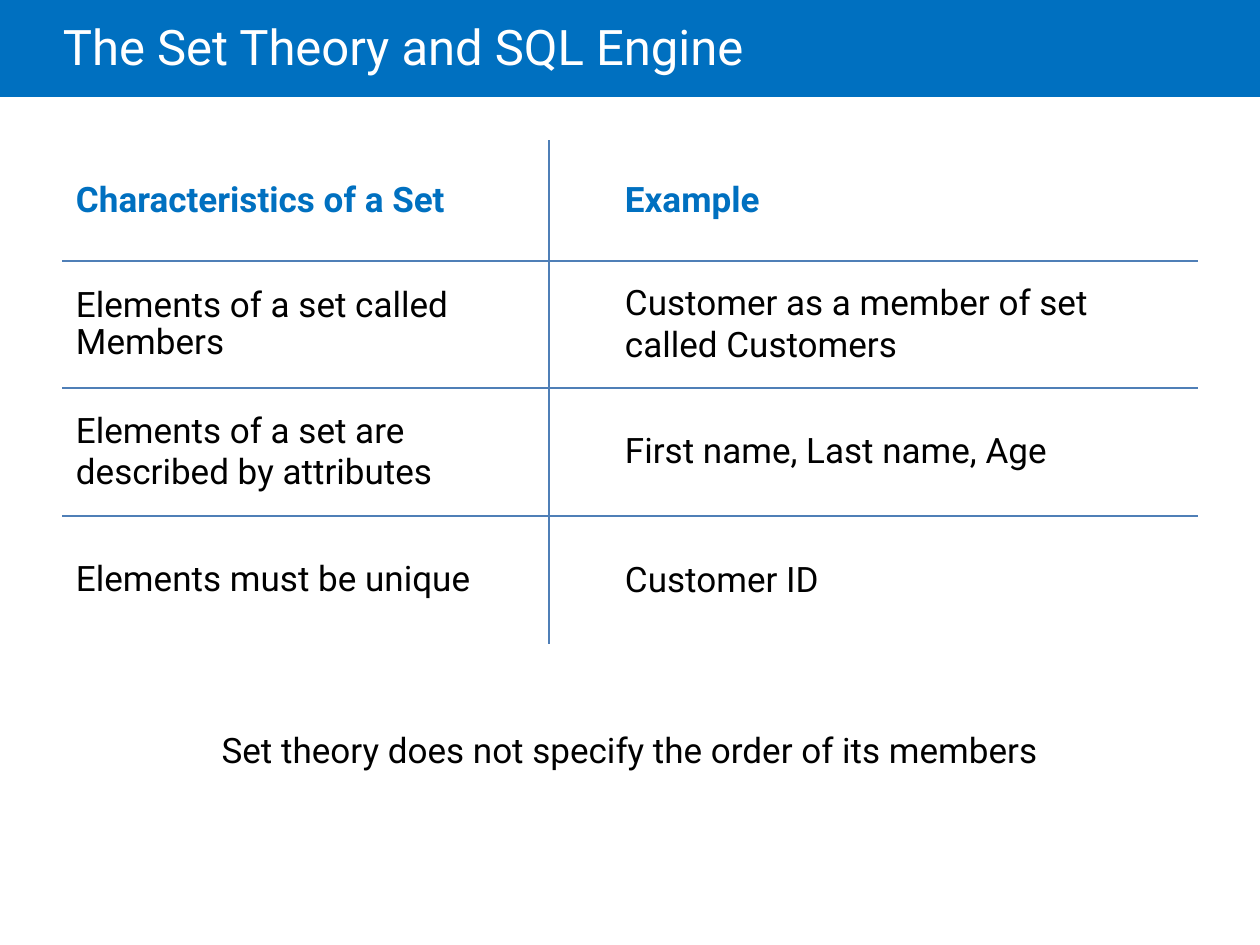
from lxml.etree import SubElement
from pptx import Presentation
from pptx.dml.color import RGBColor
from pptx.enum.shapes import MSO_SHAPE as SHAPE
from pptx.enum.text import MSO_ANCHOR as ANCHOR, PP_ALIGN as ALIGN
from pptx.oxml.ns import qn
from pptx.util import Pt

TITLE = "The Set Theory and SQL Engine"
NOTE = "Set theory does not specify the order of its members"
ROWS = [
    ("Characteristics of a Set", "Example"),
    ("Elements of a set called Members", "Customer as a member of set called Customers"),
    ("Elements of a set are described by attributes", "First name, Last name, Age"),
    ("Elements must be unique", "Customer ID"),
]
TIGHT_ROWS = (0, 1, 3)
COL_WIDTHS = (486, 648)
ROW_HEIGHTS = (120, 127, 128, 129)
LEFT_MARGINS = (13, 76)
FONT = "Roboto"
BLUE, RULE, BLACK, WHITE = "0070C0", "4F7FB7", "000000", "FFFFFF"
SCALE = 914400 / 126


def px(n):
    return round(n * SCALE)


def rgb(value):
    return RGBColor.from_string(value)


def write(tf, text, size, color, bold=False, spacing=None, align=ALIGN.LEFT):
    tf.word_wrap = True
    tf.text = text
    p = tf.paragraphs[0]
    p.alignment = align
    if spacing:
        p.line_spacing = spacing
    font = p.runs[0].font
    font.name, font.size, font.bold = FONT, Pt(size), bold
    font.color.rgb = rgb(color)


def add_border(cell, side):
    ln = SubElement(cell._tc.get_or_add_tcPr(), qn(f"a:ln{side}"), w=str(Pt(1.5)))
    fill = SubElement(ln, qn("a:solidFill"))
    SubElement(fill, qn("a:srgbClr"), val=RULE)


prs = Presentation()
prs.slide_width, prs.slide_height = px(1260), px(945)
s = prs.slides.add_slide(prs.slide_layouts[6])

band = s.shapes.add_shape(SHAPE.RECTANGLE, 0, 0, px(1260), px(97))
band.shadow.inherit = False
band.fill.solid()
band.fill.fore_color.rgb = rgb(BLUE)
band.line.fill.background()

title = s.shapes.add_textbox(px(63), 0, px(1071), px(102))
title.text_frame.margin_left = 0
title.text_frame.vertical_anchor = ANCHOR.MIDDLE
write(title.text_frame, TITLE, 28, WHITE, spacing=0.85)

table = s.shapes.add_table(len(ROWS), len(COL_WIDTHS), px(63), px(141),
                           px(sum(COL_WIDTHS)), px(sum(ROW_HEIGHTS))).table
table.first_row = table.horz_banding = False
for column, width in zip(table.columns, COL_WIDTHS):
    column.width = px(width)
for row, height in zip(table.rows, ROW_HEIGHTS):
    row.height = px(height)

for i, texts in enumerate(ROWS):
    for j, text in enumerate(texts):
        cell = table.cell(i, j)
        cell.vertical_anchor = ANCHOR.MIDDLE
        cell.margin_left = px(LEFT_MARGINS[j])
        cell.margin_right = cell.margin_top = cell.margin_bottom = px(13)
        inner_sides = {"L": j > 0, "R": j < len(texts) - 1,
                       "T": i > 0, "B": i < len(ROWS) - 1}
        for side, inner in inner_sides.items():
            if inner:
                add_border(cell, side)
        cell.fill.background()
        tight = j == 0 and i in TIGHT_ROWS
        write(cell.text_frame, text, 20, BLACK if i else BLUE, bold=i == 0,
              spacing=0.9 if tight else None)

note = s.shapes.add_textbox(px(63), px(722), px(1134), px(55))
write(note.text_frame, NOTE, 20, BLACK, align=ALIGN.CENTER)

prs.save("out.pptx")
